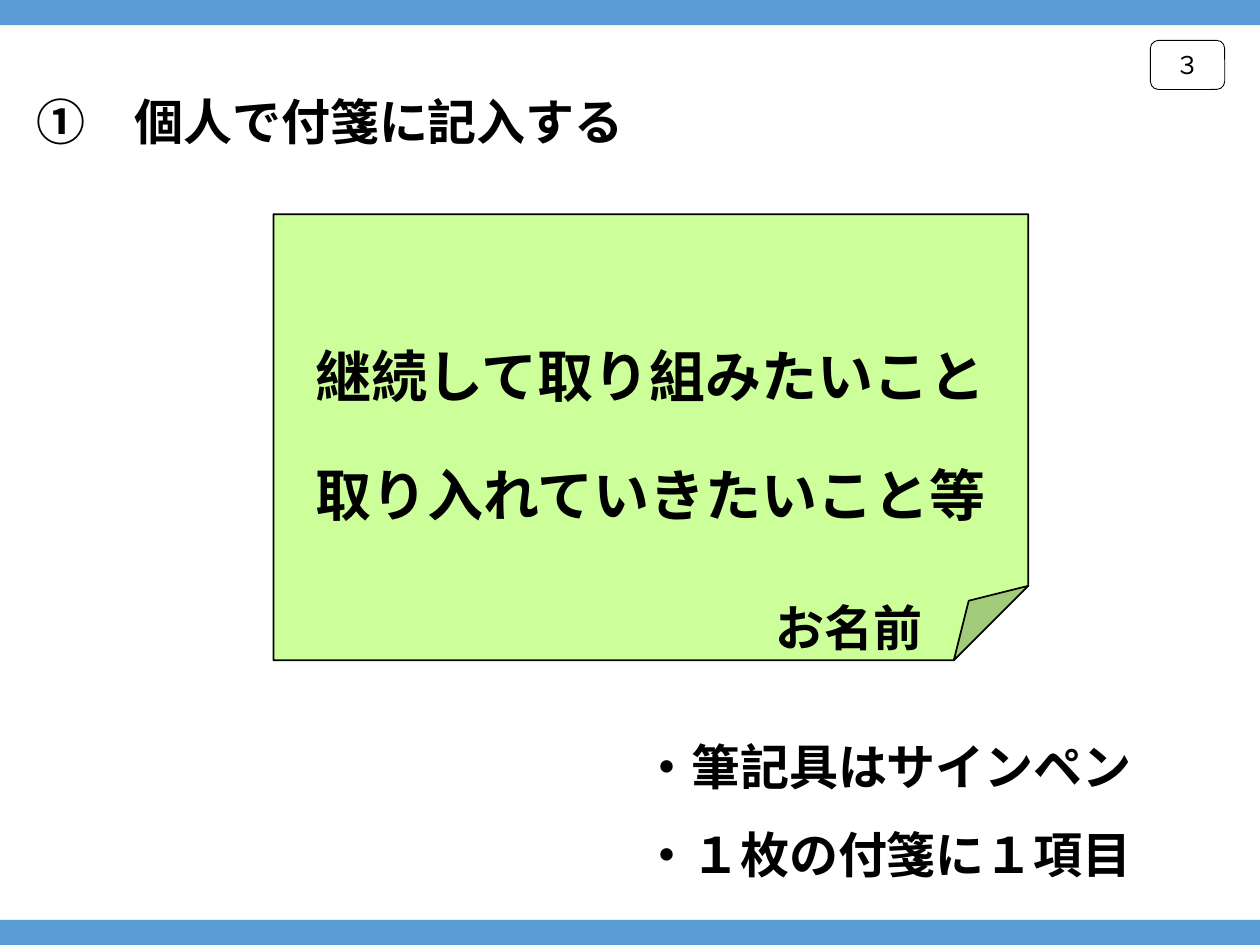
from lxml.etree import SubElement
from pptx import Presentation
from pptx.dml.color import RGBColor
from pptx.enum.shapes import MSO_SHAPE
from pptx.enum.text import MSO_ANCHOR, MSO_AUTO_SIZE, PP_ALIGN
from pptx.oxml.ns import qn
from pptx.util import Inches, Pt

FONT = "Noto Sans CJK JP"
BLACK = RGBColor(0x00, 0x00, 0x00)
WHITE = RGBColor(0xFF, 0xFF, 0xFF)
BLUE = RGBColor(0x5B, 0x9B, 0xD5)
NOTE_GREEN = RGBColor(0xCC, 0xFF, 0x99)


def write_lines(shape, lines, size, bold=True, frame_format=None, paragraph_format=None):
    """Fill a shape with one formatted paragraph per line."""
    frame = shape.text_frame
    for name, value in (frame_format or {}).items():
        setattr(frame, name, value)
    for index, line in enumerate(lines):
        paragraph = frame.paragraphs[0] if index == 0 else frame.add_paragraph()
        for name, value in (paragraph_format or {}).items():
            setattr(paragraph, name, value)
        run = paragraph.add_run()
        run.text = line
        for name, value in {"size": Pt(size), "bold": bold, "name": FONT}.items():
            setattr(run.font, name, value)
        run.font.color.rgb = BLACK
        SubElement(run.font._element, qn("a:ea"), typeface=FONT)


def add_box(kind, left, top, width, height, fill, line_width=None):
    """Add a filled shape, outlined in black if a line width is given."""
    shape = slide.shapes.add_shape(
        kind, Inches(left), Inches(top), Inches(width), Inches(height))
    shape.shadow.inherit = False
    shape.fill.solid()
    shape.fill.fore_color.rgb = fill
    if line_width:
        shape.line.color.rgb = BLACK
        shape.line.width = Pt(line_width)
    else:
        shape.line.fill.background()
    return shape


presentation = Presentation()
presentation.slide_width = Inches(10)
presentation.slide_height = Inches(7.5)
slide = presentation.slides.add_slide(presentation.slide_layouts[5])

# Title
title = slide.shapes.title
title_place = {"left": 0.19, "top": 0.68, "width": 7.97, "height": 0.57}
for name, value in title_place.items():
    setattr(title, name, Inches(value))
write_lines(title, ["①　個人で付箋に記入する"], 28,
            frame_format={"vertical_anchor": MSO_ANCHOR.TOP, "word_wrap": True,
                          "auto_size": MSO_AUTO_SIZE.SHAPE_TO_FIT_TEXT},
            paragraph_format={"alignment": PP_ALIGN.LEFT})

# Bands along the top and bottom edges
for top in (0, 7.3):
    add_box(MSO_SHAPE.RECTANGLE, 0, top, 10, 0.2, BLUE)

# Sticky note, its text set below the middle
note = add_box(MSO_SHAPE.FOLDED_CORNER, 2.17, 1.7, 5.99, 3.54, NOTE_GREEN, 1)
write_lines(note, ["継続して取り組みたいこと", "取り入れていきたいこと等"], 32,
            frame_format={"vertical_anchor": MSO_ANCHOR.MIDDLE, "word_wrap": True,
                          "margin_top": Inches(0.6)},
            paragraph_format={"alignment": PP_ALIGN.CENTER})
note.text_frame.paragraphs[1].space_before = Pt(30)

# Name on the note, and writing rules below it
free_texts = [
    (6.06, 4.46, 1.38, 0.75, ["お名前"]),
    (5, 5.56, 4.13, 1.51, ["・筆記具はサインペン", "・１枚の付箋に１項目"]),
]
for left, top, width, height, lines in free_texts:
    text_box = slide.shapes.add_textbox(
        Inches(left), Inches(top), Inches(width), Inches(height))
    write_lines(text_box, lines, 28,
                frame_format={"word_wrap": False,
                              "auto_size": MSO_AUTO_SIZE.SHAPE_TO_FIT_TEXT},
                paragraph_format={"line_spacing": 1.5})

# Page number
page_number = add_box(MSO_SHAPE.ROUNDED_RECTANGLE, 9.13, 0.32, 0.59, 0.39, WHITE, 0.5)
write_lines(page_number, ["３"], 14, bold=False,
            frame_format={"vertical_anchor": MSO_ANCHOR.MIDDLE},
            paragraph_format={"alignment": PP_ALIGN.CENTER})

presentation.save("out.pptx")
